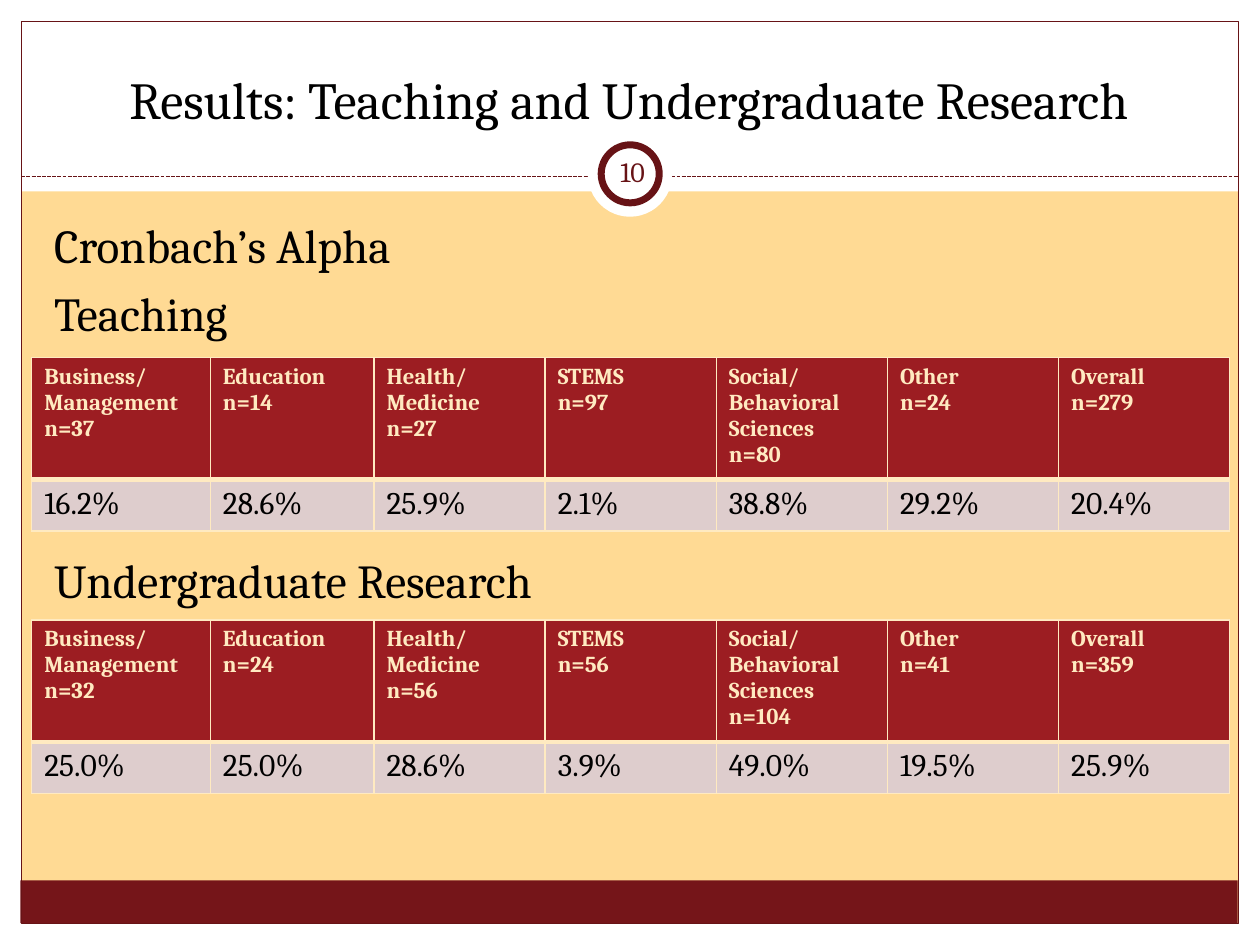
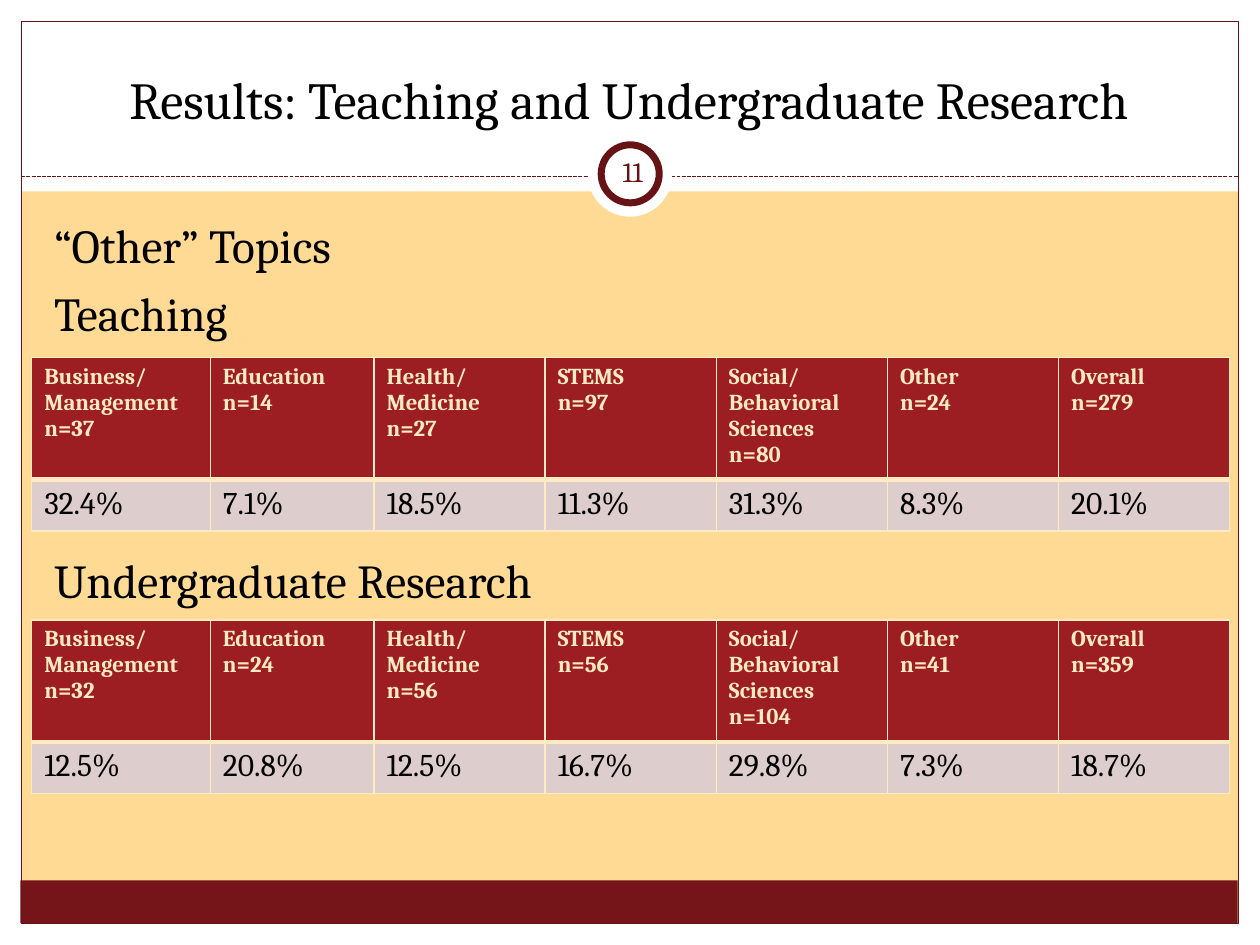
"""Build two result slides that compare teaching and undergraduate research by discipline."""

from dataclasses import dataclass
from typing import Any

import lxml.etree
import pptx
import pptx.dml.color
import pptx.enum.dml
import pptx.enum.shapes
import pptx.enum.text
import pptx.oxml.ns
import pptx.util

Cm = pptx.util.Cm
Pt = pptx.util.Pt
RECTANGLE = pptx.enum.shapes.MSO_SHAPE.RECTANGLE
OVAL = pptx.enum.shapes.MSO_SHAPE.OVAL
CENTER = pptx.enum.text.PP_ALIGN.CENTER
LEFT = pptx.enum.text.PP_ALIGN.LEFT
ANCHOR = pptx.enum.text.MSO_ANCHOR

SLIDE_WIDTH, SLIDE_HEIGHT = 25.4, 19.05
MARGIN = 0.43
INNER_WIDTH = SLIDE_WIDTH - 2 * MARGIN
RULE_TOP = 3.56

SAND, WHITE, BLACK = "FFDA94", "FFFFFF", "000000"
MAROON, BAND_RED = "671316", "751519"
HEADER_RED, CELL_PINK, CREAM = "9C1D22", "DECDCD", "FFEAC1"

TITLE = "Results: Teaching and Undergraduate Research"
DISCIPLINES = (
    "Business/\vManagement",
    "Education",
    "Health/\vMedicine",
    "STEMS",
    "Social/\vBehavioral Sciences",
    "Other",
    "Overall",
)
COLUMN_WIDTHS = (3.6, 3.3) + (3.45,) * 5
ROW_HEIGHTS = (2.33, 1.04)
TABLE_LEFT = 0.64


@dataclass(frozen=True)
class Box:
    """Position and size in centimetres."""

    left: float
    top: float
    width: float
    height: float

    def lengths(self) -> tuple[Any, ...]:
        """Return the four values as lengths."""
        return Cm(self.left), Cm(self.top), Cm(self.width), Cm(self.height)


@dataclass(frozen=True)
class Decoration:
    """Preset shape of the shared slide design."""

    kind: Any
    box: Box
    fill: str | None = None
    line: str | None = None
    line_width: float = 0.75


@dataclass(frozen=True)
class TextStyle:
    """Look of a piece of text."""

    size: float
    color: str = BLACK
    bold: bool = False
    alignment: Any = LEFT


@dataclass(frozen=True)
class Section:
    """Table of one activity: its top edge and the respondents by discipline."""

    top: float
    counts: tuple[int, ...]


@dataclass(frozen=True)
class ResultSlide:
    """Content that differs from slide to slide."""

    number: int
    topic: str
    teaching: tuple[float, ...]
    research: tuple[float, ...]


DECORATIONS = (
    Decoration(RECTANGLE, Box(0, SLIDE_HEIGHT - MARGIN, SLIDE_WIDTH, MARGIN), WHITE),
    Decoration(RECTANGLE, Box(0, 0, SLIDE_WIDTH, 3.86), WHITE),
    Decoration(RECTANGLE, Box(0, 0, MARGIN, SLIDE_HEIGHT), WHITE),
    Decoration(RECTANGLE, Box(SLIDE_WIDTH - MARGIN, 0, MARGIN, SLIDE_HEIGHT), WHITE),
    Decoration(RECTANGLE, Box(0.41, 17.75, INNER_WIDTH, 0.86), BAND_RED),
    Decoration(
        RECTANGLE,
        Box(MARGIN, MARGIN, INNER_WIDTH, SLIDE_HEIGHT - 2 * MARGIN),
        line=MAROON,
    ),
)
NUMBER_RING = (
    Decoration(OVAL, Box(11.85, 2.67, 1.7, 1.7), WHITE),
    Decoration(OVAL, Box(12.12, 2.92, 1.17, 1.17), WHITE, MAROON, 4),
)
TITLE_BOX = Box(0.84, 0.64, 23.7, 2.11)
HEADINGS_BOX = Box(0.84, 4.24, 23.62, 12.7)
NUMBER_BOX = Box(12.12, 2.84, 1.27, 1.22)

TITLE_STYLE = TextStyle(29.7, alignment=CENTER)
HEADING_STYLE = TextStyle(27)
NUMBER_STYLE = TextStyle(16, MAROON, alignment=CENTER)
HEADER_STYLE = TextStyle(13, CREAM, True)
VALUE_STYLE = TextStyle(18)
HEADING_GAPS = (0, 6.3, 120.3)

TEACHING = Section(7.21, (37, 14, 27, 97, 80, 24, 279))
RESEARCH = Section(12.5, (32, 24, 56, 56, 104, 41, 359))

RESULT_SLIDES = (
    ResultSlide(
        10,
        "Cronbach’s Alpha",
        (16.2, 28.6, 25.9, 2.1, 38.8, 29.2, 20.4),
        (25.0, 25.0, 28.6, 3.9, 49.0, 19.5, 25.9),
    ),
    ResultSlide(
        11,
        "“Other” Topics",
        (32.4, 7.1, 18.5, 11.3, 31.3, 8.3, 20.1),
        (12.5, 20.8, 12.5, 16.7, 29.8, 7.3, 18.7),
    ),
)


def rgb(color: str) -> pptx.dml.color.RGBColor:
    """Turn a hex string into a colour."""
    return pptx.dml.color.RGBColor.from_string(color)


def apply_format(target: Any, values: dict[str, Any]) -> None:
    """Set every attribute named in the values."""
    for name, value in values.items():
        setattr(target, name, value)


def set_fill(fill: Any, color: str | None) -> None:
    """Fill with a solid colour, or with nothing."""
    if color is None:
        fill.background()
    else:
        fill.solid()
        fill.fore_color.rgb = rgb(color)


def write_text(text_frame: Any, text: str, style: TextStyle) -> None:
    """Write the text and style each of its paragraphs."""
    text_frame.text = text
    for paragraph in text_frame.paragraphs:
        paragraph.alignment = style.alignment
        for run in paragraph.runs:
            apply_format(
                run.font,
                {"name": "Cambria", "size": Pt(style.size), "bold": style.bold},
            )
            run.font.color.rgb = rgb(style.color)


def add_decoration(slide: Any, decoration: Decoration) -> None:
    """Draw one preset shape of the design."""
    shape = slide.shapes.add_shape(decoration.kind, *decoration.box.lengths())
    shape.shadow.inherit = False
    set_fill(shape.fill, decoration.fill)
    set_fill(shape.line.fill, decoration.line)
    if decoration.line:
        shape.line.width = Pt(decoration.line_width)


def add_title_rule(slide: Any) -> None:
    """Draw the dashed line under the title."""
    connector = slide.shapes.add_connector(
        pptx.enum.shapes.MSO_CONNECTOR.STRAIGHT,
        Cm(MARGIN), Cm(RULE_TOP), Cm(SLIDE_WIDTH - MARGIN), Cm(RULE_TOP),
    )
    set_fill(connector.line.fill, MAROON)
    apply_format(
        connector.line,
        {"width": Pt(0.75), "dash_style": pptx.enum.dml.MSO_LINE.SQUARE_DOT},
    )
    properties = connector._element.spPr
    lxml.etree.SubElement(properties, pptx.oxml.ns.qn("a:effectLst"))


def add_text(
    slide: Any, box: Box, text: str, style: TextStyle, **frame_format: Any
) -> Any:
    """Add a wrapping text box and return its text frame."""
    text_frame = slide.shapes.add_textbox(*box.lengths()).text_frame
    apply_format(text_frame, {"word_wrap": True, **frame_format})
    write_text(text_frame, text, style)
    return text_frame


def add_headings(slide: Any, topic: str) -> None:
    """Write the topic and the heading above each table."""
    text = "\n".join((topic, "Teaching", "Undergraduate Research"))
    text_frame = add_text(slide, HEADINGS_BOX, text, HEADING_STYLE)
    for paragraph, gap in zip(text_frame.paragraphs, HEADING_GAPS):
        paragraph.space_before = Pt(gap)


def set_borders(cell: Any, top: float, bottom: float) -> None:
    """Draw cream borders of the given widths, with thin sides."""
    qualify = pptx.oxml.ns.qn
    properties = cell._tc.get_or_add_tcPr()
    widths = {"a:lnL": 1, "a:lnR": 1, "a:lnT": top, "a:lnB": bottom}
    for position, (tag, width) in enumerate(widths.items()):
        border = lxml.etree.Element(qualify(tag), w=str(int(Pt(width))))
        fill = lxml.etree.SubElement(border, qualify("a:solidFill"))
        lxml.etree.SubElement(fill, qualify("a:srgbClr"), val=CREAM)
        properties.insert(position, border)


def fill_cell(
    cell: Any, text: str, style: TextStyle, color: str, top: float, bottom: float
) -> None:
    """Write, fill and border one table cell."""
    write_text(cell.text_frame, text, style)
    set_fill(cell.fill, color)
    set_borders(cell, top, bottom)


def add_result_table(slide: Any, section: Section, shares: tuple[float, ...]) -> None:
    """Add the table of shares by discipline."""
    box = Box(TABLE_LEFT, section.top, sum(COLUMN_WIDTHS), sum(ROW_HEIGHTS))
    table = slide.shapes.add_table(
        len(ROW_HEIGHTS), len(DISCIPLINES), *box.lengths()
    ).table
    table.horz_banding = False
    for row, height in zip(table.rows, ROW_HEIGHTS):
        row.height = Cm(height)
    columns = zip(COLUMN_WIDTHS, DISCIPLINES, section.counts, shares)
    for index, (width, discipline, count, share) in enumerate(columns):
        table.columns[index].width = Cm(width)
        header = f"{discipline}\nn={count}"
        fill_cell(table.cell(0, index), header, HEADER_STYLE, HEADER_RED, 1, 3)
        fill_cell(table.cell(1, index), f"{share:.1f}%", VALUE_STYLE, CELL_PINK, 3, 1)


def add_result_slide(presentation: Any, content: ResultSlide) -> None:
    """Add one slide with the shared design and its two tables."""
    slide = presentation.slides.add_slide(presentation.slide_layouts[6])
    for decoration in DECORATIONS:
        add_decoration(slide, decoration)
    add_title_rule(slide)
    for decoration in NUMBER_RING:
        add_decoration(slide, decoration)
    add_text(
        slide, TITLE_BOX, TITLE, TITLE_STYLE, vertical_anchor=ANCHOR.BOTTOM
    )
    add_headings(slide, content.topic)
    add_result_table(slide, TEACHING, content.teaching)
    add_result_table(slide, RESEARCH, content.research)
    sides = ("left", "top", "right", "bottom")
    insets = {f"margin_{side}": Cm(0.13) for side in sides}
    add_text(
        slide, NUMBER_BOX, str(content.number), NUMBER_STYLE,
        vertical_anchor=ANCHOR.MIDDLE, **insets,
    )


def main() -> None:
    """Build and save the presentation."""
    presentation = pptx.Presentation()
    apply_format(
        presentation,
        {"slide_width": Cm(SLIDE_WIDTH), "slide_height": Cm(SLIDE_HEIGHT)},
    )
    set_fill(presentation.slide_master.background.fill, SAND)
    for content in RESULT_SLIDES:
        add_result_slide(presentation, content)
    presentation.save("out.pptx")


if __name__ == "__main__":
    main()
